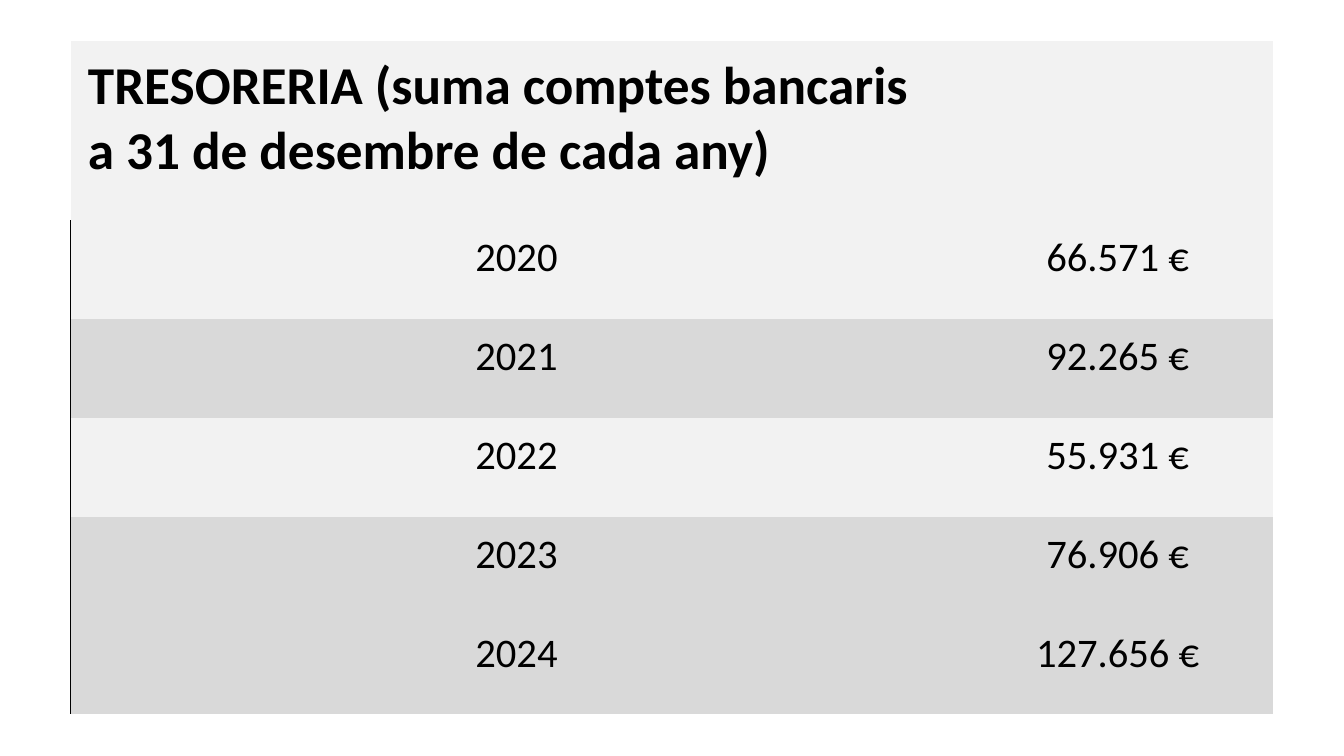
import pptx
import pptx.dml.color
import pptx.enum.text
import pptx.oxml
import pptx.oxml.ns
import pptx.util

Pt = pptx.util.Pt
BLACK = pptx.dml.color.RGBColor(0x00, 0x00, 0x00)
LIGHT = pptx.dml.color.RGBColor(0xF2, 0xF2, 0xF2)
DARK = pptx.dml.color.RGBColor(0xD9, 0xD9, 0xD9)
PLAIN_TABLE_STYLE = "{2D5ABB26-0587-4C30-8999-92F81FD0307C}"

TITLE = "TRESORERIA (suma comptes bancaris a 31 de desembre de cada any)"
BALANCES = [
    ("2020", "66.571 €", LIGHT),
    ("2021", "92.265 €", DARK),
    ("2022", "55.931 €", LIGHT),
    ("2023", "76.906 €", DARK),
    ("2024", "127.656 €", DARK),
]


def write(cell, text, font="Calibri", size=29, bold=False, color=BLACK,
          align=pptx.enum.text.PP_ALIGN.CENTER):
    """Write one formatted paragraph into a table cell."""
    para = cell.text_frame.paragraphs[0]
    para.alignment = align
    span = para.add_run()
    span.text = text
    span.font.name = font
    span.font.size = Pt(size)
    span.font.bold = bold
    span.font.color.rgb = color


class Page:
    """Holds the current slide and its cell style."""

    margins = {"left": 12.24, "top": 3.6, "right": 1.44, "bottom": 25.92}

    def __init__(self, deck):
        self.slide = deck.slides.add_slide(deck.slide_layouts[6])

    def table(self, left, top, widths, heights):
        frame = self.slide.shapes.add_table(
            len(heights), len(widths), Pt(left), Pt(top),
            Pt(sum(widths)), Pt(sum(heights)))
        table = frame.table
        properties = table._tbl.tblPr
        properties.find(pptx.oxml.ns.qn("a:tableStyleId")).text = PLAIN_TABLE_STYLE
        for column, width in zip(table.columns, widths):
            column.width = Pt(width)
        for row, height in zip(table.rows, heights):
            row.height = Pt(height)
        return table

    def cell(self, cell, fill, text="", **style):
        cell.fill.solid()
        cell.fill.fore_color.rgb = fill
        cell.vertical_anchor = pptx.enum.text.MSO_ANCHOR.BOTTOM
        for side, margin in self.margins.items():
            setattr(cell, f"margin_{side}", Pt(margin))
        if text:
            write(cell, text, **style)

    def left_border(self, cell, color=BLACK, width=1):
        line = pptx.oxml.parse_xml(
            f'<a:lnL {pptx.oxml.ns.nsdecls("a")} w="{Pt(width)}">'
            f'<a:solidFill><a:srgbClr val="{color}"/></a:solidFill></a:lnL>')
        cell._tc.get_or_add_tcPr().insert(0, line)


def main():
    deck = pptx.Presentation()
    deck.slide_width, deck.slide_height = Pt(960), Pt(540)
    page = Page(deck)

    # Table grid
    table = page.table(50.6, 29.4, [626, 233], [128] + [70.6] * len(BALANCES))

    # Heading row
    page.cell(table.cell(0, 0), LIGHT, TITLE, size=38, bold=True,
              align=pptx.enum.text.PP_ALIGN.LEFT)
    page.cell(table.cell(0, 1), LIGHT)

    # Year rows
    for row, (year, balance, fill) in enumerate(BALANCES, start=1):
        page.cell(table.cell(row, 0), fill, year)
        page.cell(table.cell(row, 1), fill, balance)
        page.left_border(table.cell(row, 0))

    deck.save("out.pptx")


if __name__ == "__main__":
    main()
